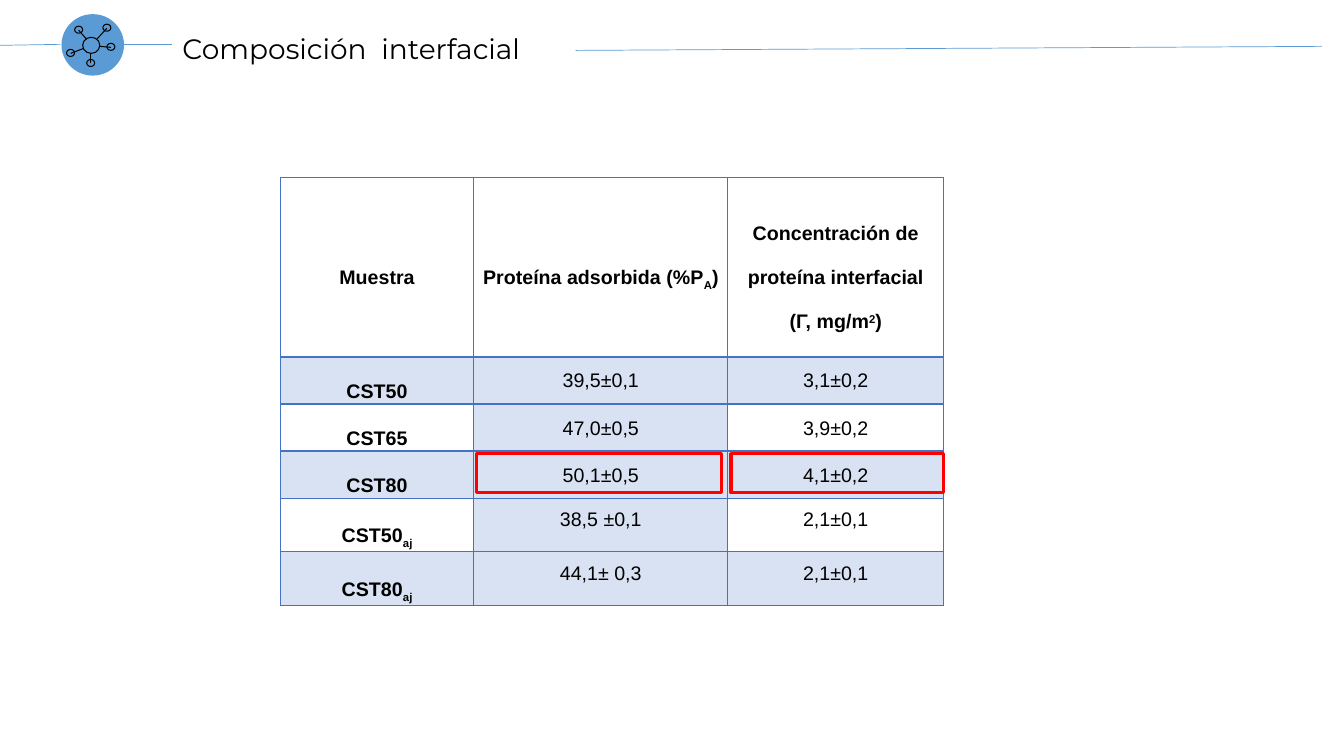
"""Build the slide on interfacial composition."""
from lxml import etree
from pptx import Presentation
from pptx.dml.color import RGBColor
from pptx.enum.shapes import MSO_CONNECTOR, MSO_SHAPE
from pptx.enum.text import MSO_ANCHOR, MSO_AUTO_SIZE, PP_ALIGN
from pptx.oxml.ns import qn
from pptx.util import Inches, Pt

LINE = MSO_CONNECTOR.STRAIGHT
OVAL, RECT = MSO_SHAPE.OVAL, MSO_SHAPE.RECTANGLE
MIDDLE, TOP = MSO_ANCHOR.MIDDLE, MSO_ANCHOR.TOP
CENTER, JUSTIFY = PP_ALIGN.CENTER, PP_ALIGN.JUSTIFY
GROW = MSO_AUTO_SIZE.SHAPE_TO_FIT_TEXT

COLORS = {"sky": "5B9BD5", "blue": "4472C4", "red": "FF0000", "black": "000000"}
NODES = [(1.06, 0.28), (0.78, 0.3), (0.7, 0.53), (0.9, 0.63), (1.1, 0.47)]
RIMS = [(0.96, 0.39), (0.86, 0.39), (0.83, 0.48), (0.9, 0.53), (0.99, 0.46)]
RULES = [(1.23, 0.44, 1.71, 0.44), (5.71, 0.5, 13.11, 0.46), (0, 0.45, 0.6, 0.44)]
WIDTHS = [1.92, 2.52, 2.14]
HEIGHTS = [1.78] + [0.39] * 5
ROWS = [
    ["Muestra", "Proteína adsorbida (%P|A|)",
     "Concentración de proteína interfacial (Γ, mg/m|2|)"],
    ["CST50", "39,5±0,1", "3,1±0,2"],
    ["CST65", "47,0±0,5", "3,9±0,2"],
    ["CST80", "50,1±0,5", "4,1±0,2"],
    ["CST50|aj", "38,5 ±0,1", "2,1±0,1"],
    ["CST80|aj", "44,1± 0,3", "2,1±0,1"],
]


def paint(name):
    """Return the named colour."""
    return RGBColor.from_string(COLORS[name])


def add_shape(shapes, kind, box, fill=None, line=None, width=0.75):
    """Add a preset shape with an optional fill and outline."""
    shape = shapes.add_shape(kind, *map(Inches, box))
    shape.shadow.inherit = False
    if fill:
        shape.fill.solid()
        shape.fill.fore_color.rgb = paint(fill)
    else:
        shape.fill.background()
    if line:
        shape.line.color.rgb = paint(line)
        shape.line.width = Pt(width)
    else:
        shape.line.fill.background()


def add_line(shapes, ends, color, width):
    """Add a straight line without a shadow."""
    line = shapes.add_connector(LINE, *map(Inches, ends))
    line.line.color.rgb = paint(color)
    line.line.width = Pt(width)
    etree.SubElement(line.element.spPr, qn("a:effectLst"))


def add_icon(slide):
    """Add the round network icon."""
    shapes = slide.shapes.add_group_shape().shapes
    add_shape(shapes, OVAL, (0.61, 0.14, 0.62, 0.61), fill="sky")
    add_shape(shapes, OVAL, (0.82, 0.37, 0.17, 0.16), line="black")
    for (x, y), rim in zip(NODES, RIMS):
        add_shape(shapes, OVAL, (x - 0.04, y - 0.04, 0.08, 0.07), line="black")
        add_line(shapes, (x, y, *rim), "black", 0.75)


def style(run, font, size, bold=False):
    """Set the font of a run."""
    run.font.name = font
    run.font.size = Pt(size)
    run.font.bold = bold
    run.font.color.rgb = paint("black")


def add_title(slide, text):
    """Add the slide title."""
    box = slide.shapes.add_textbox(*map(Inches, (1.71, 0.26, 9.9, 0.44)))
    frame = box.text_frame
    frame.word_wrap = True
    frame.auto_size = GROW
    frame.text = text
    para = frame.paragraphs[0]
    para.alignment = JUSTIFY
    style(para.runs[0], "Montserrat", 20)


def set_edge(cell, side, width):
    """Draw one border of a cell."""
    edge = etree.SubElement(cell._tc.get_or_add_tcPr(), qn("a:ln" + side), w=str(Pt(width)))
    fill = etree.SubElement(edge, qn("a:solidFill"))
    etree.SubElement(fill, qn("a:srgbClr"), val=COLORS["blue"])


def set_fill(cell, tinted):
    """Give a cell a pale tint or no fill."""
    if not tinted:
        cell.fill.background()
        return
    cell.fill.solid()
    cell.fill.fore_color.rgb = paint("blue")
    tint = cell._tc.tcPr.find(".//" + qn("a:solidFill") + "[last()]/" + qn("a:srgbClr"))
    for tint in cell._tc.tcPr.findall(qn("a:solidFill") + "/" + qn("a:srgbClr")):
        etree.SubElement(tint, qn("a:alpha"), val="20000")


def set_text(cell, text, bold, space):
    """Write cell text, with every second part raised or lowered."""
    para = cell.text_frame.paragraphs[0]
    para.alignment = CENTER
    para.line_spacing = space
    for i, part in enumerate(text.split("|")):
        run = para.add_run()
        run.text = part
        style(run, "Arial", 14, bold)
        if i == 1:
            shift = "30000" if part.isdigit() else "-25000"
            run._r.get_or_add_rPr().set("baseline", shift)


def add_table(slide):
    """Add the table of samples."""
    box = (2.78, 1.76, sum(WIDTHS), sum(HEIGHTS))
    table = slide.shapes.add_table(len(ROWS), len(WIDTHS), *map(Inches, box)).table
    table.first_row = table.horz_banding = False
    for col, width in zip(table.columns, WIDTHS):
        col.width = Inches(width)
    for r, (row, height) in enumerate(zip(ROWS, HEIGHTS)):
        table.rows[r].height = Inches(height)
        for c, text in enumerate(row):
            cell = table.cell(r, c)
            head = r == 0 or c == 0
            late = r > 3 and c > 0
            cell.margin_left = cell.margin_right = Inches(0.07)
            cell.margin_top = cell.margin_bottom = 0
            cell.vertical_anchor = TOP if late else MIDDLE
            set_text(cell, text, head, 2.0 if head else 1.5 if late else 1.07)
            for side in "LRTB":
                thick = (r, side) in ((0, "B"), (1, "T"))
                set_edge(cell, side, 2 if thick else 1)
            set_fill(cell, r % 2 == 1 or (r > 0 and c == 1))


def main():
    """Build and save the slide."""
    deck = Presentation()
    deck.slide_width, deck.slide_height = Inches(13.33), Inches(7.5)
    slide = deck.slides.add_slide(deck.slide_layouts[6])
    add_icon(slide)
    add_title(slide, "Composición  interfacial")
    for ends in RULES:
        add_line(slide.shapes, ends, "sky", 0.5)
    add_table(slide)
    for left, width in ((4.73, 2.43), (7.25, 2.11)):
        add_shape(slide.shapes, RECT, (left, 4.5, width, 0.39), line="red", width=2.25)
    deck.save("out.pptx")


if __name__ == "__main__":
    main()
